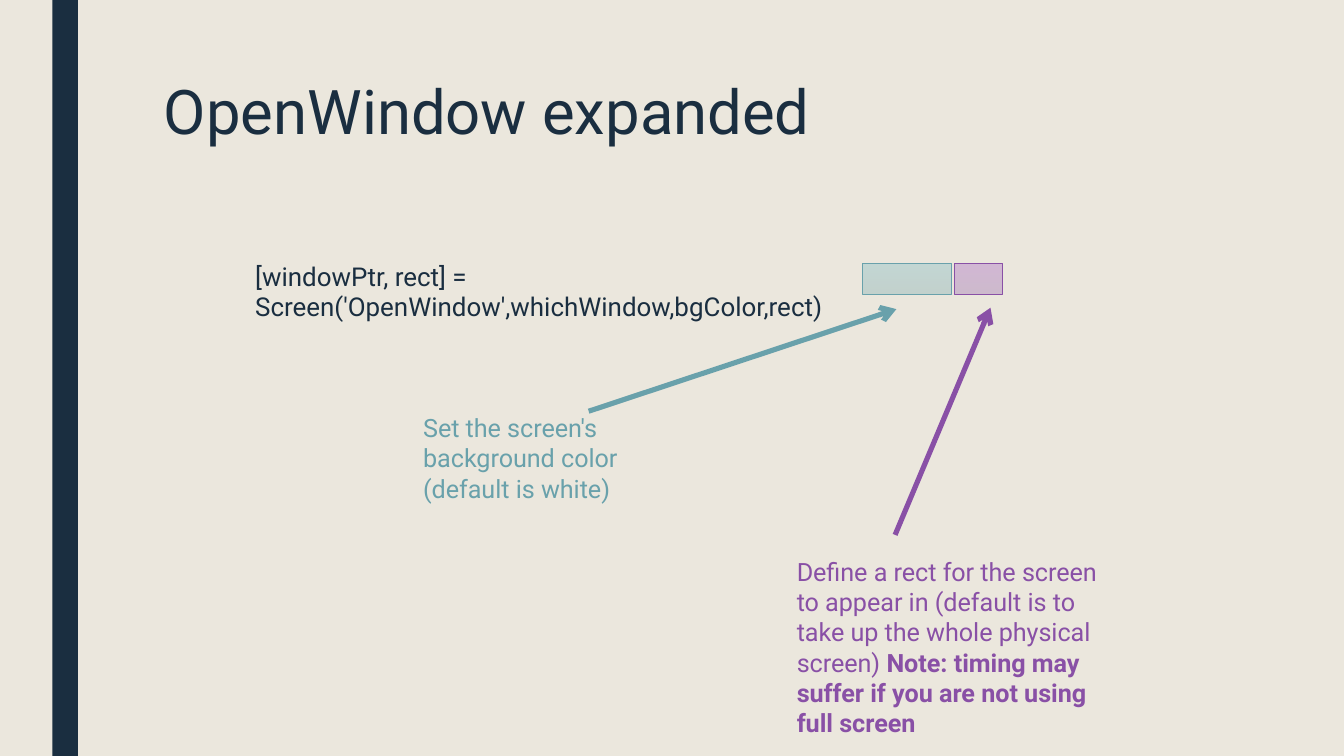
"""Builds the slide that explains the optional arguments of OpenWindow."""
import pptx
import pptx.dml.color
import pptx.enum.shapes
import pptx.enum.text
import pptx.oxml
import pptx.oxml.ns
import pptx.util

Inches = pptx.util.Inches

THEME = {
    "font": "Roboto",
    "paper": "EBE7DD", "ink": "1A2E40", "teal": "69A1AB", "purple": "8950A6",
    "title": 33, "code": 13.9, "note": 13.5,
    "outline": 0.5, "arrow": 2.75,
}

PAGE_WIDTH = 10
PAGE_HEIGHT = PAGE_WIDTH * 9 / 16
TITLE = "OpenWindow expanded"
TITLE_AREA = (1.12, 0.56, 7.88, 1.22)
CODE = "[windowPtr, rect] = Screen('OpenWindow',whichWindow,bgColor,rect)"
CODE_AREA = (1.8, 1.9, 6.01, 0.47)
SIDE_BAR = (0.39, 0, 0.19, PAGE_HEIGHT)

ARGUMENTS = [
    {
        "color": "teal", "stops": ("5A98A3", "58ACBB"), "opacity": 28,
        "marker": (6.42, 1.96, 0.66, 0.23),
        "arrow": (4.38, 3.06, 6.67, 2.3),
        "note_area": (3.05, 3.02, 2.11, 0.78),
        "note": [("Set the screen's background color (default is white)", False)],
    },
    {
        "color": "purple", "stops": ("8146A3", "903BBC"), "opacity": 27,
        "marker": (7.1, 1.96, 0.36, 0.23),
        "arrow": (6.66, 3.98, 7.37, 2.29),
        "note_area": (5.83, 4.09, 2.45, 1.46),
        "note": [
            ("Define a rect for the screen to appear in (default is to take up "
             "the whole physical screen) ", False),
            ("Note: timing may suffer if you are not using full screen", True),
        ],
    },
]


def rgb(value):
    """Return the colour for a theme name or a hex value."""
    return pptx.dml.color.RGBColor.from_string(THEME.get(value, value))


def add_child(parent, tag, **attributes):
    """Append a drawing element to an XML parent."""
    child = pptx.oxml.parse_xml(f"<a:{tag} {pptx.oxml.ns.nsdecls('a')}/>")
    for name, value in attributes.items():
        child.set(name, value)
    parent.append(child)


def write(box, spans, size, color):
    """Fill a box with one left-aligned paragraph of (text, bold) spans."""
    frame = box.text_frame
    frame.word_wrap = True
    frame.auto_size = pptx.enum.text.MSO_AUTO_SIZE.NONE
    frame.vertical_anchor = pptx.enum.text.MSO_ANCHOR.TOP
    para = frame.paragraphs[0]
    para.alignment = pptx.enum.text.PP_ALIGN.LEFT
    for text, bold in spans:
        span = para.add_run()
        span.text = text
        span.font.name = THEME["font"]
        span.font.size = pptx.util.Pt(THEME[size])
        span.font.bold = bold
        span.font.color.rgb = rgb(color)
    return para


def add_text(slide, area, spans, size, color):
    """Add a text box and return its paragraph."""
    box = slide.shapes.add_textbox(*map(Inches, area))
    return write(box, spans, size, color)


def add_rectangle(slide, area):
    """Add a rectangle without a shadow."""
    shape = slide.shapes.add_shape(
        pptx.enum.shapes.MSO_SHAPE.RECTANGLE, *map(Inches, area))
    shape.shadow.inherit = False
    return shape


def add_marker(slide, argument):
    """Add the translucent gradient box of an argument."""
    marker = add_rectangle(slide, argument["marker"])
    marker.fill.gradient()
    marker.fill.gradient_angle = 90
    for stop, color in zip(marker.fill.gradient_stops, argument["stops"]):
        stop.color.rgb = rgb(color)
    for color in marker._element.spPr.iter(pptx.oxml.ns.qn("a:srgbClr")):
        add_child(color, "alpha", val=str(argument["opacity"] * 1000))
    marker.line.color.rgb = rgb(argument["color"])
    marker.line.width = pptx.util.Pt(THEME["outline"])


def add_arrow(slide, argument):
    """Add the arrow from a note to its marker."""
    arrow = slide.shapes.add_connector(
        pptx.enum.shapes.MSO_CONNECTOR.STRAIGHT, *map(Inches, argument["arrow"]))
    arrow.line.color.rgb = rgb(argument["color"])
    arrow.line.width = pptx.util.Pt(THEME["arrow"])
    add_child(arrow.line._get_or_add_ln(), "tailEnd", type="arrow")
    add_child(arrow._element.spPr, "effectLst")


def main():
    """Build and save the deck."""
    deck = pptx.Presentation()
    deck.slide_width, deck.slide_height = Inches(PAGE_WIDTH), Inches(PAGE_HEIGHT)
    slide = deck.slides.add_slide(deck.slide_layouts[5])
    slide.background.fill.solid()
    slide.background.fill.fore_color.rgb = rgb("paper")

    bar = add_rectangle(slide, SIDE_BAR)
    bar.fill.solid()
    bar.fill.fore_color.rgb = rgb("ink")
    bar.line.fill.background()

    title = slide.shapes.title
    title.left, title.top, title.width, title.height = map(Inches, TITLE_AREA)
    write(title, [(TITLE, False)], "title", "ink").line_spacing = 0.89

    code = add_text(slide, CODE_AREA, [(CODE, False)], "code", "ink")
    code.line_spacing = 0.97

    for add_part in (add_marker, add_arrow):
        for argument in ARGUMENTS:
            add_part(slide, argument)
    for argument in ARGUMENTS:
        add_text(slide, argument["note_area"], argument["note"],
                 "note", argument["color"])

    deck.save("out.pptx")


if __name__ == "__main__":
    main()
